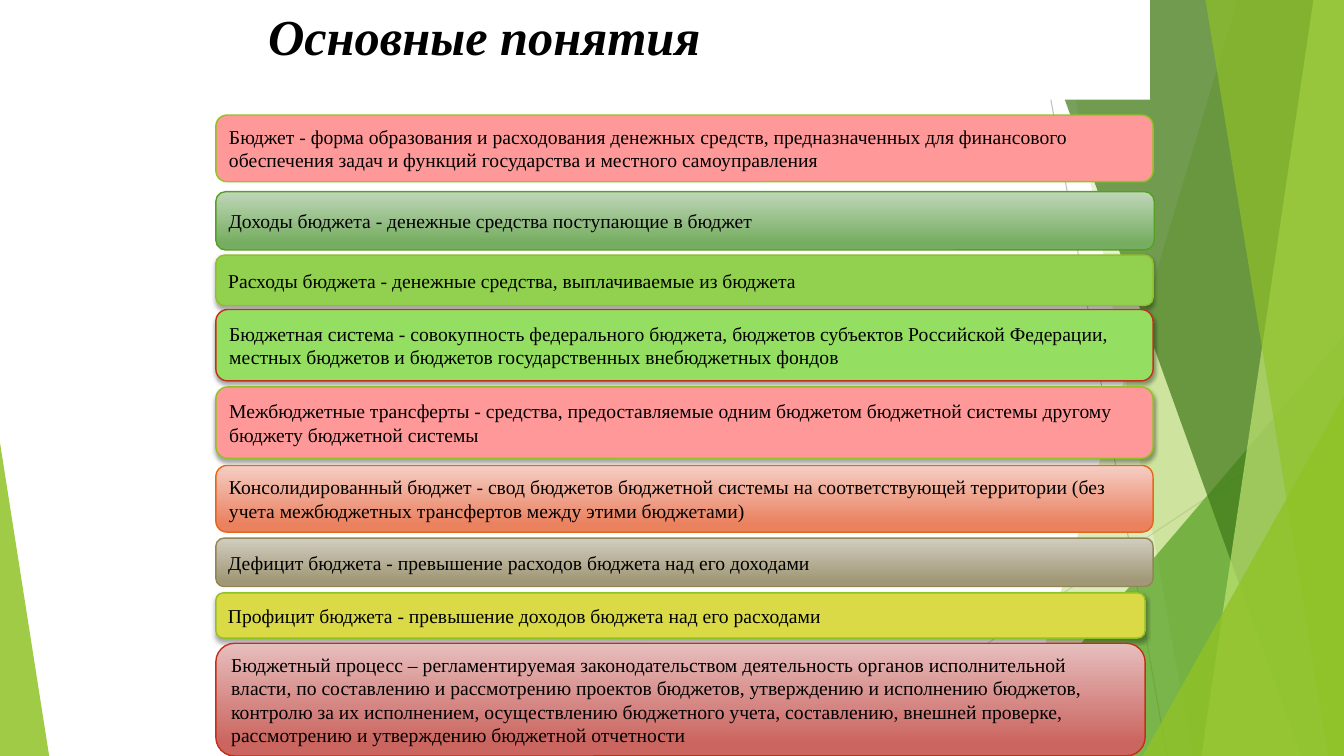
from dataclasses import dataclass

from lxml.etree import SubElement
from pptx import Presentation
from pptx.dml.color import RGBColor as RGB
from pptx.enum.shapes import MSO_CONNECTOR as Connector, MSO_SHAPE as Shape
from pptx.enum.text import MSO_ANCHOR as Anchor, MSO_AUTO_SIZE as AutoSize, PP_ALIGN as Align
from pptx.oxml.ns import qn
from pptx.util import Cm, Pt


@dataclass(frozen=True)
class Theme:
    font: str = "Times New Roman"
    title_size: int = 36
    body_size: int = 14
    text: str = "000000"
    paper: str = "FFFFFF"
    lime: str = "90C226"
    pale_lime: str = "C0E474"
    green: str = "54A021"
    dark_green: str = "3F7819"
    grey: str = "BFBFBF"
    light_grey: str = "D9D9D9"
    red: str = "C42F1A"
    orange: str = "E76618"
    olive: str = "918655"
    pink: str = "FF9999"
    grass: str = "92D050"
    mint: str = "94DE61"
    yellow: str = "DADA46"
    green_fade: tuple = ("C0D6B9", "76AD61")
    orange_fade: tuple = ("F5CEC5", "EA815F")
    olive_fade: tuple = ("D1CDC0", "A19877")
    red_fade: tuple = ("E6BFBE", "CB6560")


T = Theme()
WIDTH, HEIGHT = 33.87, 19.05
BOX_LEFT = 5.44

CONCEPTS = [
    (2.9, 23.62, 1.68, T.pink, T.lime, False,
     "Бюджет - форма образования и расходования денежных средств, предназначенных для финансового "
     "обеспечения задач и функций государства и местного самоуправления"),
    (4.83, 23.65, 1.47, T.green_fade, T.green, False,
     "Доходы бюджета - денежные средства поступающие в бюджет"),
    (6.43, 23.62, 1.27, T.grass, T.lime, True,
     "Расходы бюджета - денежные средства, выплачиваемые из бюджета"),
    (7.8, 23.62, 1.8, T.mint, T.red, True,
     "Бюджетная система - совокупность федерального бюджета, бюджетов субъектов Российской Федерации, "
     "местных бюджетов и бюджетов государственных внебюджетных фондов"),
    (9.75, 23.62, 1.8, T.pink, T.lime, True,
     "Межбюджетные трансферты - средства, предоставляемые одним бюджетом бюджетной системы другому "
     "бюджету бюджетной системы"),
    (11.73, 23.62, 1.68, T.orange_fade, T.orange, False,
     "Консолидированный бюджет - свод бюджетов бюджетной системы на соответствующей территории (без "
     "учета межбюджетных трансфертов между этими бюджетами)"),
    (13.56, 23.62, 1.22, T.olive_fade, T.olive, False,
     "Дефицит бюджета - превышение расходов бюджета над его доходами"),
    (14.94, 23.42, 1.14, T.yellow, T.lime, True,
     "Профицит бюджета - превышение доходов бюджета над его расходами"),
    (16.21, 23.42, 2.84, T.red_fade, T.red, False,
     "Бюджетный процесс – регламентируемая законодательством деятельность органов исполнительной "
     "власти, по составлению и рассмотрению проектов бюджетов, утверждению и исполнению бюджетов, "
     "контролю за их исполнением, осуществлению бюджетного учета, составлению, внешней проверке, "
     "рассмотрению и утверждению бюджетной отчетности"),
]


def paint(fill, color):
    fill.solid()
    fill.fore_color.rgb = RGB.from_string(color)


def paint_fade(fill, colors):
    fill.gradient()
    fill.gradient_angle = 270
    for stop, color, position in zip(fill.gradient_stops, colors, (0, 0.88)):
        stop.color.rgb = RGB.from_string(color)
        stop.position = position


def make_glass(sp, color, opacity):
    sp.shadow.inherit = False
    paint(sp.fill, color)
    sp.line.fill.background()
    tint = sp.element.spPr.find(".//" + qn("a:srgbClr"))
    SubElement(tint, qn("a:alpha"), val=str(opacity * 1000))


def add_line(s, x1, y1, x2, y2, color):
    line = s.shapes.add_connector(Connector.STRAIGHT, Cm(x1), Cm(y1), Cm(x2), Cm(y2))
    line.line.color.rgb = RGB.from_string(color)
    line.line.width = Pt(0.75)
    SubElement(line.element.spPr, qn("a:effectLst"))


def add_shard(s, top_x, bottom_x, color, opacity):
    builder = s.shapes.build_freeform(Cm(top_x), 0)
    corners = [(WIDTH, 0), (WIDTH, HEIGHT), (bottom_x, HEIGHT)]
    builder.add_line_segments([(Cm(x), Cm(y)) for x, y in corners], close=True)
    make_glass(builder.convert_to_shape(), color, opacity)


def add_triangle(s, left, top, width, apex, color, opacity):
    sp = s.shapes.add_shape(Shape.ISOSCELES_TRIANGLE, Cm(left), Cm(top), Cm(width), Cm(HEIGHT - top))
    sp.adjustments[0] = apex
    make_glass(sp, color, opacity)


def add_backdrop(s):
    add_line(s, 26.04, 0, 29.41, HEIGHT, T.grey)
    add_line(s, WIDTH, 10.24, 20.62, HEIGHT, T.light_grey)
    add_shard(s, 31.19, 25.5, T.lime, 30)
    add_shard(s, 26.67, 30.05, T.lime, 20)
    add_triangle(s, 24.82, 8.46, 9.05, 1, T.green, 72)
    add_shard(s, 25.93, 32.79, T.dark_green, 70)
    add_shard(s, 33.1, 30.28, T.pale_lime, 70)
    add_shard(s, 30.38, 33.48, T.lime, 65)
    add_triangle(s, 28.8, 9.98, 5.07, 1, T.lime, 80)
    add_triangle(s, 0, 11.15, 1.24, 0, T.lime, 85)


def write(tf, text, size, anchor, bold=None, italic=None):
    tf.word_wrap = True
    tf.auto_size = AutoSize.NONE
    tf.vertical_anchor = anchor
    p = tf.paragraphs[0]
    p.alignment = Align.LEFT
    r = p.add_run()
    r.text = text
    r.font.name = T.font
    r.font.size = Pt(size)
    r.font.bold = bold
    r.font.italic = italic
    r.font.color.rgb = RGB.from_string(T.text)


def add_title(s, text):
    title = s.shapes.title
    title.left, title.top, title.width, title.height = Cm(6.5), Cm(0), Cm(22.48), Cm(2.51)
    paint(title.fill, T.paper)
    write(title.text_frame, text, T.title_size, Anchor.TOP, bold=True, italic=True)
    s.shapes.element.append(title.element)


def add_shadow(sp):
    effects = sp.element.spPr.find(qn("a:effectLst"))
    shadow = SubElement(effects, qn("a:outerShdw"), blurRad=str(Pt(3)), dist=str(Pt(2)),
                        dir="5400000", rotWithShape="0")
    color = SubElement(shadow, qn("a:srgbClr"), val=T.text)
    SubElement(color, qn("a:alpha"), val="35000")


def add_concept(s, top, width, height, fill, border, shadowed, text):
    sp = s.shapes.add_shape(Shape.ROUNDED_RECTANGLE, Cm(BOX_LEFT), Cm(top), Cm(width), Cm(height))
    sp.shadow.inherit = False
    if isinstance(fill, tuple):
        paint_fade(sp.fill, fill)
    else:
        paint(sp.fill, fill)
    sp.line.color.rgb = RGB.from_string(border)
    sp.line.width = Pt(1)
    if shadowed:
        add_shadow(sp)
    write(sp.text_frame, text, T.body_size, Anchor.MIDDLE)


def main():
    prs = Presentation()
    prs.slide_width, prs.slide_height = Cm(WIDTH), Cm(HEIGHT)
    s = prs.slides.add_slide(prs.slide_layouts[5])
    add_backdrop(s)
    add_title(s, "Основные понятия")
    for concept in CONCEPTS:
        add_concept(s, *concept)
    prs.save("out.pptx")


if __name__ == "__main__":
    main()
